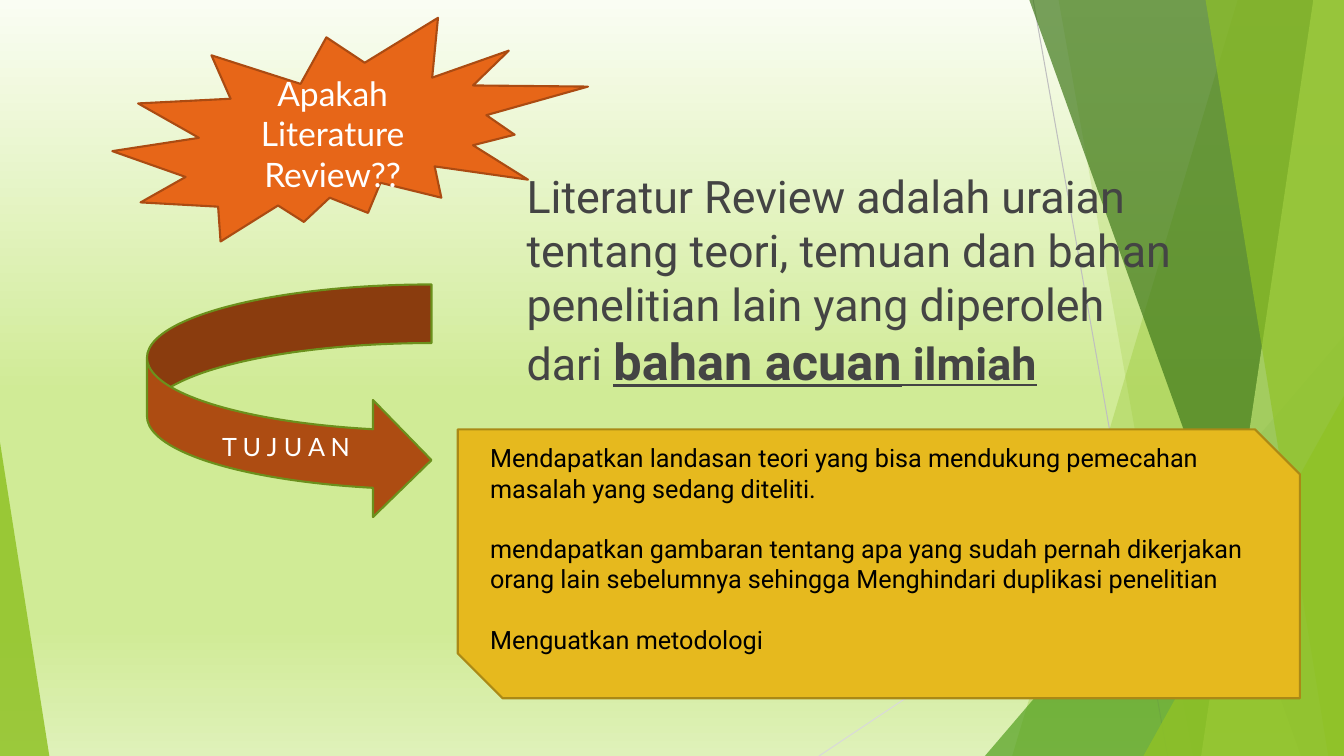
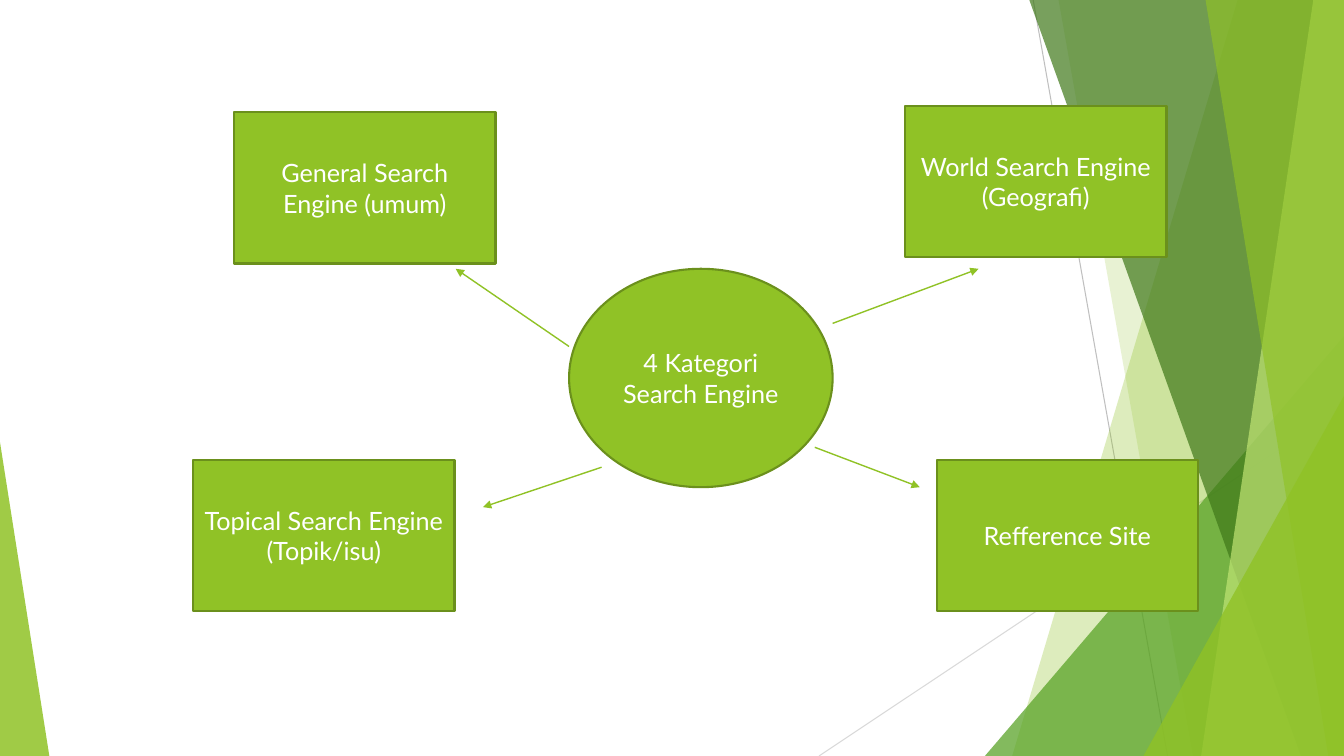
"""Build two slides on literature review and search engine categories."""
from copy import deepcopy

from pptx import Presentation
from pptx.dml.color import RGBColor
from pptx.enum.shapes import MSO_CONNECTOR, MSO_SHAPE
from pptx.enum.text import MSO_ANCHOR, PP_ALIGN
from pptx.oxml.ns import qn
from pptx.oxml.xmlchemy import OxmlElement
from pptx.util import Pt

PX = 9525
WIDTH, HEIGHT = 1280, 720
BLANK_LAYOUT = 6
COLORS = {
    "green": "90C226", "green_edge": "6B901C", "leaf": "54A021",
    "forest": "3F7819", "lime": "C0E474", "gray": "BFBFBF", "pale_gray": "D9D9D9",
    "orange": "E76618", "orange_edge": "AB4B12", "rust": "AD4C12",
    "gold": "E6B91E", "gold_edge": "AA8916",
    "white": "FFFFFF", "black": "000000", "text": "444444",
}
SKY = [(0, "FAFDF3"), (0.52, "D0EB96"), (0.83, "D0EB96"), (1, "DFF1B9")]

RULES = [((984, 0), (1112, 720), "gray"), ((1280, 387), (780, 720), "pale_gray")]
PANELS = [
    ("band", (1179, 964), "green", 30),
    ("band", (1008, 1136), "green", 20),
    ("peak", (938, 320, 342, 400, 1), "leaf", 72),
    ("band", (980, 1239), "forest", 70),
    ("band", (1251, 1144), "lime", 70),
    ("band", (1148, 1265), "green", 65),
    ("peak", (1089, 377, 191, 343, 1), "green", 80),
    ("peak", (0, 421, 47, 299, 0), "green", 85),
]

DEFINITION = [
    ("Literatur Review adalah uraian tentang teori, temuan dan bahan "
     "penelitian lain yang diperoleh dari ", 32, False),
    ("bahan acuan", 36, True),
    (" ilmiah", 32, True),
]
GOALS = [
    "Mendapatkan landasan teori yang bisa mendukung pemecahan masalah yang sedang diteliti.",
    "mendapatkan gambaran tentang apa yang sudah pernah dikerjakan orang lain "
    "sebelumnya sehingga Menghindari duplikasi penelitian",
    "Menguatkan metodologi",
]
CATEGORY_SIZE = (249, 144)
CATEGORIES = [
    ("General Search Engine (umum)", (223, 107), ((542, 330), (434, 256))),
    ("World Search Engine (Geografi)", (862, 101), ((793, 308), (932, 256))),
    ("Refference Site", (892, 438), ((776, 426), (876, 464))),
    ("Topical Search Engine (Topik/isu)", (184, 438), ((573, 445), (460, 483))),
]


def color(name):
    return RGBColor.from_string(COLORS[name])


def emu(*lengths):
    return [length * PX for length in lengths]


def style_span(span, size, font, ink):
    span.font.size, span.font.name = Pt(size), font
    span.font.color.rgb = color(ink)


def add_line(page, start, end, ink, width, arrow=False):
    line = page.shapes.add_connector(MSO_CONNECTOR.STRAIGHT, *emu(*start, *end))
    line.line.color.rgb = color(ink)
    line.line.width = Pt(width)
    line.element.spPr.append(OxmlElement("a:effectLst"))
    if arrow:
        tail = OxmlElement("a:tailEnd")
        tail.set("type", "triangle")
        line.line._get_or_add_ln().append(tail)
    return line


def add_panel(page, kind, geometry, ink, opacity):
    if kind == "band":
        top, bottom = geometry
        builder = page.shapes.build_freeform(top, -1, scale=PX)
        builder.add_line_segments([(WIDTH, -1), (WIDTH, HEIGHT), (bottom, HEIGHT)])
        panel = builder.convert_to_shape()
    else:
        *area, apex = geometry
        panel = page.shapes.add_shape(MSO_SHAPE.ISOSCELES_TRIANGLE, *emu(*area))
        panel.adjustments[0] = apex
    panel.shadow.inherit = False
    panel.line.fill.background()
    panel.fill.solid()
    panel.fill.fore_color.rgb = color(ink)
    alpha = OxmlElement("a:alpha")
    alpha.set("val", str(opacity * 1000))
    panel.element.spPr.find(".//" + qn("a:srgbClr")).append(alpha)
    return panel


def decorate_layout(layout, page):
    parts = [add_line(page, *rule, 0.75) for rule in RULES]
    parts += [add_panel(page, *panel) for panel in PANELS]
    for part in parts:
        layout.element.cSld.spTree.append(part.element)


def paint_sky(page):
    fill = page.background.fill
    fill.gradient()
    fill.gradient_angle = 270
    stops = page.element.find(".//" + qn("a:gsLst"))
    while len(stops) < len(SKY):
        stops.append(deepcopy(stops[0]))
    for stop, (position, tint) in zip(fill.gradient_stops, SKY):
        stop.position = position
        stop.color.rgb = RGBColor.from_string(tint)


def add_box(page, kind, area, fill, edge, texts, size=18, font="Lato",
            ink="white", align=PP_ALIGN.CENTER, gap=0):
    box = page.shapes.add_shape(kind, *emu(*area))
    box.shadow.inherit = False
    box.fill.solid()
    box.fill.fore_color.rgb = color(fill)
    box.line.color.rgb = color(edge)
    box.line.width = Pt(1.5)
    frame = box.text_frame
    frame.word_wrap = True
    frame.vertical_anchor = MSO_ANCHOR.MIDDLE
    frame.text = "\n".join(texts)
    for index, para in enumerate(frame.paragraphs):
        para.alignment = align
        para.space_before = Pt(gap if index else 0)
        style_span(para.runs[0], size, font, ink)
    return box


def build_review(page):
    paint_sky(page)
    definition = page.shapes.add_textbox(*emu(492, 156, 640, 223))
    definition.text_frame.word_wrap = True
    para = definition.text_frame.paragraphs[0]
    for text, size, strong in DEFINITION:
        span = para.add_run()
        span.text = text
        style_span(span, size, "Roboto", "text")
        span.font.bold = span.font.underline = strong
    add_box(page, MSO_SHAPE.EXPLOSION2, (107, 17, 453, 213), "orange", "orange_edge",
            ["Apakah Literature Review??"], size=24)
    goal_arrow = add_box(page, MSO_SHAPE.CURVED_RIGHT_ARROW, (140, 271, 271, 223),
                         "rust", "green_edge", ["T U J U A N "])
    goal_arrow.text_frame.margin_top = 91 * PX
    goals = add_box(page, MSO_SHAPE.SNIP_2_DIAG_RECTANGLE, (436, 409, 802, 256),
                    "gold", "gold_edge", GOALS, font="Roboto", ink="black",
                    align=PP_ALIGN.LEFT, gap=21.6)
    goals.text_frame.margin_bottom = 34 * PX


def build_categories(page):
    add_box(page, MSO_SHAPE.OVAL, (542, 256, 251, 208), "green", "green_edge",
            ["4 Kategori Search Engine"])
    for text, corner, (start, end) in CATEGORIES:
        add_box(page, MSO_SHAPE.RECTANGLE, corner + CATEGORY_SIZE,
                "green", "green_edge", [text])
        add_line(page, start, end, "green", 1, arrow=True)


def main():
    deck = Presentation()
    deck.slide_width, deck.slide_height = emu(WIDTH, HEIGHT)
    layout = deck.slide_layouts[BLANK_LAYOUT]
    review, categories = [deck.slides.add_slide(layout) for _ in range(2)]
    decorate_layout(layout, review)
    build_review(review)
    build_categories(categories)
    deck.save("out.pptx")


if __name__ == "__main__":
    main()
